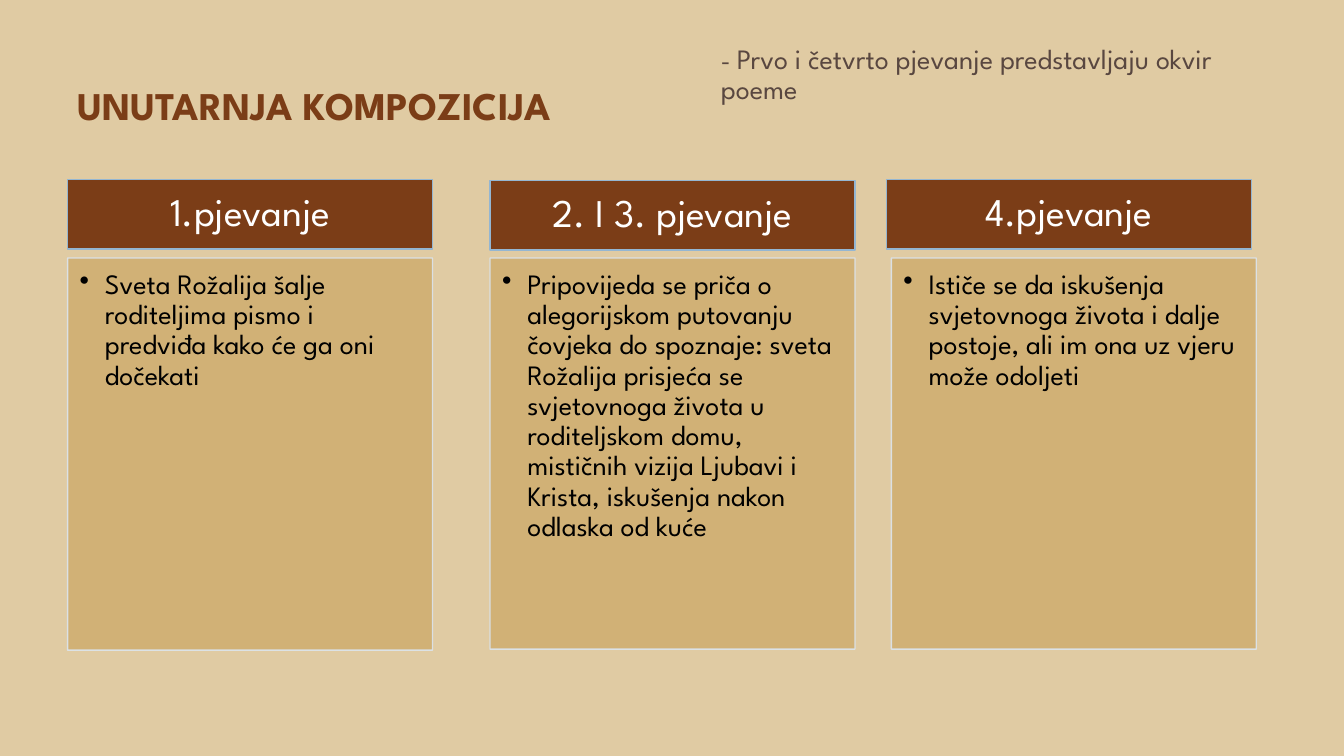
from lxml.etree import SubElement as Sub
from pptx import Presentation
from pptx.dml.color import RGBColor as RGB
from pptx.enum.shapes import MSO_SHAPE as Shape
from pptx.enum.text import MSO_ANCHOR as Anchor, MSO_AUTO_SIZE as Auto, PP_ALIGN as Align
from pptx.oxml.ns import qn
from pptx.util import Inches, Pt

HUE = {
    "page": "E0CBA3", "brown": "7B3D17", "note": "594740", "sand": "D0AF72",
    "blue": "94B6D2", "pale": "DCE5EE", "white": "FFFFFF", "black": "000000",
}


def write(shape, parts, hue, anchor, pads, align=Align.LEFT, mark=None, bold=False):
    """Fill a shape with one paragraph of (text, size) parts; mark is (left, indent, bullet)."""
    frame = shape.text_frame
    look = {"word_wrap": True, "auto_size": Auto.NONE, "vertical_anchor": anchor}
    sides = ("margin_left", "margin_top", "margin_right", "margin_bottom")
    look.update(zip(sides, map(Inches, pads)))
    for key, val in look.items():
        setattr(frame, key, val)
    para = frame.paragraphs[0]
    if mark:
        left, dent, dot = mark
        props = para._p.get_or_add_pPr()
        props.set("marL", str(Inches(left)))
        props.set("indent", str(Inches(dent)))
        if dot:
            Sub(props, qn("a:buChar")).set("char", dot)
        else:
            Sub(props, qn("a:buNone"))
    form = {"alignment": align, "line_spacing": 0.9, "space_before": Pt(0)}
    for key, val in form.items():
        setattr(para, key, val)
    for text, size in parts:
        run = para.add_run()
        run.text = text
        font = {"name": "League Spartan", "size": Pt(size), "bold": bold}
        for key, val in font.items():
            setattr(run.font, key, val)
        run.font.color.rgb = RGB.from_string(HUE[hue])
    return para


def panel(box, fill, line, alpha=None):
    """Draw an outlined rectangle."""
    shape = slide.shapes.add_shape(Shape.RECTANGLE, *map(Inches, box))
    shape.shadow.inherit = False
    shape.fill.solid()
    shape.fill.fore_color.rgb = RGB.from_string(HUE[fill])
    shape.line.color.rgb = RGB.from_string(HUE[line])
    shape.line.width = Pt(1)
    if alpha:
        for tint in list(shape.element.spPr.iter(qn("a:srgbClr"))):
            Sub(tint, qn("a:alpha")).set("val", str(alpha * 1000))
    return shape


# Slide and background
deck = Presentation()
deck.slide_width, deck.slide_height = Inches(13.33), Inches(7.5)
slide = deck.slides.add_slide(deck.slide_layouts[1])
back = slide.background.fill
back.solid()
back.fore_color.rgb = RGB.from_string(HUE["page"])

# Title and note
title, note = slide.shapes.title, slide.placeholders[1]
spots = [(title, (0.67, 0.24, 5.56, 1.08)), (note, (7, 0.4, 5.56, 0.76))]
for holder, box in spots:
    for key, val in zip(("left", "top", "width", "height"), box):
        setattr(holder, key, Inches(val))
inset = (0.1, 0.05, 0.1, 0.05)
head = write(title, [("UNUTARNJA KOMPOZICIJA", 28)], "brown", Anchor.BOTTOM, inset, bold=True)
head.line_spacing = Pt(20)
words = [("- ", 18), ("Prvo i četvrto pjevanje predstavljaju okvir poeme", 20)]
write(note, words, "note", Anchor.TOP, inset, mark=(0.05, 0, None))

# Three columns: heading left and top, body left and height, texts
wide = 3.62
cols = [
    (0.67, 1.78, 0.67, 3.89, "1.pjevanje",
     "Sveta Rožalija šalje roditeljima pismo i predviđa kako će ga oni dočekati"),
    (4.86, 1.79, 4.86, 3.88, "2. I 3. pjevanje",
     "Pripovijeda se priča o alegorijskom putovanju čovjeka do spoznaje: sveta Rožalija "
     "prisjeća se svjetovnoga života u roditeljskom domu, mističnih vizija Ljubavi i "
     "Krista, iskušenja nakon odlaska od kuće"),
    (8.79, 1.78, 8.84, 3.88, "4.pjevanje",
     "Ističe se da iskušenja svjetovnoga života i dalje postoje, ali im ona uz vjeru "
     "može odoljeti"),
]
for left, top, inner, tall, name, story in cols:
    bar = panel((left, top, wide, 0.69), "brown", "blue")
    write(bar, [(name, 28)], "white", Anchor.MIDDLE, (0.22, 0.12, 0.22, 0.12), Align.CENTER)
    card = panel((inner, 2.56, wide, tall), "sand", "pale", 90)
    write(card, [(story, 20)], "black", Anchor.TOP, (0.12, 0.12, 0.16, 0.17),
          mark=(0.25, -0.25, "•"))

deck.save("out.pptx")
